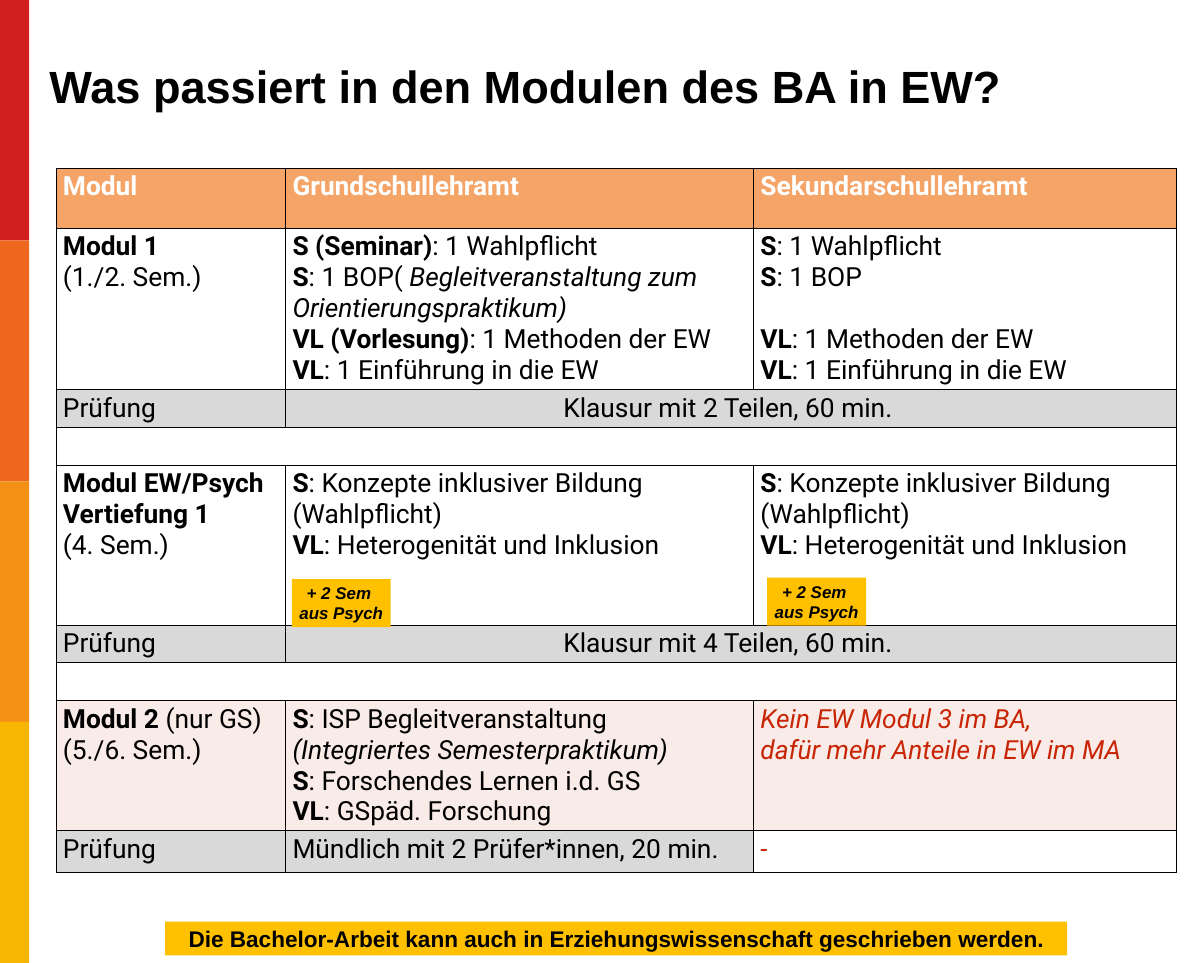
from lxml.etree import SubElement
from pptx import Presentation
from pptx.dml.color import RGBColor
from pptx.enum.shapes import MSO_SHAPE
from pptx.enum.text import MSO_ANCHOR, MSO_AUTO_SIZE, PP_ALIGN
from pptx.oxml.ns import qn
from pptx.util import Pt

PX = 9144
WIDE, HIGH = 1778, 1422

BLACK = RGBColor(0x00, 0x00, 0x00)
WHITE = RGBColor(0xFF, 0xFF, 0xFF)
GREY = RGBColor(0xD9, 0xD9, 0xD9)
ROSE = RGBColor(0xF9, 0xEB, 0xE7)
RED = RGBColor(0xC8, 0x25, 0x06)
PEACH = RGBColor(0xF4, 0xA4, 0x67)
GOLD = RGBColor(0xFF, 0xC0, 0x00)
BARS = (RGBColor(0xD1, 0x1F, 0x20), RGBColor(0xEE, 0x67, 0x1F),
        RGBColor(0xF2, 0x91, 0x15), RGBColor(0xF9, 0xB6, 0x00))

HEAD = {"name": "Arial", "size": Pt(48), "bold": True}
CELL = {"name": "Roboto", "size": Pt(28)}
BADGE = {"name": "Arial", "size": Pt(18), "bold": True, "italic": True}
NOTE = {"name": "Arial", "size": Pt(24), "bold": True}

COLS = (339, 691, 624)
TALL = (89, 236, 56, 56, 236, 56, 56, 192, 61)
GAP = Pt(33)

# ^bold^, ~italic~, a leading > leaves one line free, None joins the cell to its left
EXTRA = "^S^: Konzepte inklusiver Bildung (Wahlpflicht)\n^VL^: Heterogenität und Inklusion"
ROWS = (
    ("^Modul^", "^Grundschullehramt^", "^Sekundarschullehramt^"),
    ("^Modul 1^\n(1./2. Sem.)",
     "^S (Seminar)^: 1 Wahlpflicht\n"
     "^S^: 1 BOP( ~Begleitveranstaltung zum Orientierungspraktikum)~\n"
     "^VL (Vorlesung)^: 1 Methoden der EW ^VL^: 1 Einführung in die EW",
     "^S^: 1 Wahlpflicht\n^S^: 1 BOP\n"
     ">^VL^: 1 Methoden der EW\n^VL^: 1 Einführung in die EW"),
    ("Prüfung", "Klausur mit 2 Teilen, 60 min. ", None),
    ("", None, None),
    ("^Modul EW/Psych Vertiefung 1^\n(4. Sem.)", EXTRA, EXTRA),
    ("Prüfung", "Klausur mit 4 Teilen, 60 min. ", None),
    ("", None, None),
    ("^Modul 2 ^(nur GS)\n(5./6. Sem.)",
     "^S^: ISP Begleitveranstaltung ~(Integriertes Semesterpraktikum)~\n"
     "^S^: Forschendes Lernen i.d. GS\n^VL^: GSpäd. Forschung",
     "~Kein EW Modul 3 im BA,~\n~dafür mehr Anteile in EW im MA~"),
    ("Prüfung", "Mündlich mit 2 Prüfer*innen, 20 min.", "~-~"),
)
FILLS = (PEACH, WHITE, GREY, WHITE, WHITE, GREY, WHITE, ROSE, GREY)


def scale(box):
    """Turn px lengths into EMU."""
    return [length * PX for length in box]


def style(font, form, ink):
    """Set each format value and the colour of a font."""
    for key, value in form.items():
        setattr(font, key, value)
    font.color.rgb = ink


def block(slide, box, fill, text="", form=None):
    """Draw a plain filled box with optional centred text."""
    shape = slide.shapes.add_shape(MSO_SHAPE.RECTANGLE, *scale(box))
    shape.shadow.inherit = False
    shape.fill.solid()
    shape.fill.fore_color.rgb = fill
    shape.line.fill.background()
    if text:
        shape.text_frame.word_wrap = False
        line = shape.text_frame.paragraphs[0]
        line.text = text
        line.alignment = PP_ALIGN.CENTER
        for run in line.runs:
            style(run.font, form, BLACK)


def stripe(slide, box):
    """Stack the colour bars evenly in the box."""
    left, top, width, height = box
    edges = [top + height * i // len(BARS) for i in range(len(BARS) + 1)]
    for fill, start, end in zip(BARS, edges, edges[1:]):
        block(slide, (left, start, width, end - start), fill)


def title(slide, box):
    """Place and format the title."""
    shape = slide.shapes.title
    shape.left, shape.top, shape.width, shape.height = scale(box)
    frame = shape.text_frame
    frame.text = "Was passiert in den Modulen des BA in EW?"
    for side in ("left", "top", "right", "bottom"):
        setattr(frame, "margin_" + side, 6 * PX)
    frame.vertical_anchor = MSO_ANCHOR.MIDDLE
    frame.auto_size = MSO_AUTO_SIZE.NONE
    frame.word_wrap = True
    line = frame.paragraphs[0]
    line.alignment = PP_ALIGN.LEFT
    style(line.runs[0].font, HEAD, BLACK)


def border(cell):
    """Give a cell thin black lines on all sides."""
    props = cell._tc.get_or_add_tcPr()
    for side in ("a:lnL", "a:lnR", "a:lnT", "a:lnB"):
        edge = SubElement(props, qn(side), w=str(Pt(1)))
        paint = SubElement(edge, qn("a:solidFill"))
        SubElement(paint, qn("a:srgbClr"), val=str(BLACK))


def write(cell, text, ink):
    """Fill a cell with marked-up lines."""
    frame = cell.text_frame
    for i, part in enumerate(text.split("\n") if text else ()):
        line = frame.add_paragraph() if i else frame.paragraphs[0]
        if part.startswith(">"):
            line.space_before = GAP
        for j, chunk in enumerate(part.lstrip(">").split("^")):
            for k, piece in enumerate(chunk.split("~")):
                if piece:
                    run = line.add_run()
                    run.text = piece
                    look = {"bold": j % 2 == 1, "italic": k % 2 == 1}
                    style(run.font, CELL | look, ink)


def table(slide, box):
    """Build the module table in the box."""
    grid = slide.shapes.add_table(len(ROWS), len(COLS), *scale(box)).table
    grid.first_row = grid.horz_banding = False
    for col, width in zip(grid.columns, COLS):
        col.width = width * PX
    for r, (texts, fill) in enumerate(zip(ROWS, FILLS)):
        grid.rows[r].height = TALL[r] * PX
        for c, text in enumerate(texts):
            cell = grid.cell(r, c)
            border(cell)
            cell.fill.solid()
            cell.fill.fore_color.rgb = WHITE if text == "~-~" else fill
            last = c == len(COLS) - 1
            ink = WHITE if r == 0 else RED if last and r > 6 else BLACK
            write(cell, text, ink)
        if None in texts:
            first = texts.index(None) - 1
            grid.cell(r, first).merge(grid.cell(r, len(COLS) - 1))
            grid.cell(r, first).text_frame.paragraphs[0].alignment = PP_ALIGN.CENTER


def main():
    """Build and save the slide."""
    deck = Presentation()
    deck.slide_width, deck.slide_height = scale((WIDE, HIGH))
    slide = deck.slides.add_slide(deck.slide_layouts[5])
    stripe(slide, (0, 0, 43, HIGH))
    title(slide, (67, 29, 1543, 193))
    table(slide, (83, 248, sum(COLS), sum(TALL)))
    for left, top in ((431, 855), (1133, 853)):
        block(slide, (left, top, 146, 71), GOLD, "+ 2 Sem \vaus Psych", BADGE)
    block(slide, (244, 1361, 1332, 50), GOLD,
          "Die Bachelor-Arbeit kann auch in Erziehungswissenschaft geschrieben werden.", NOTE)
    deck.save("out.pptx")


if __name__ == "__main__":
    main()
